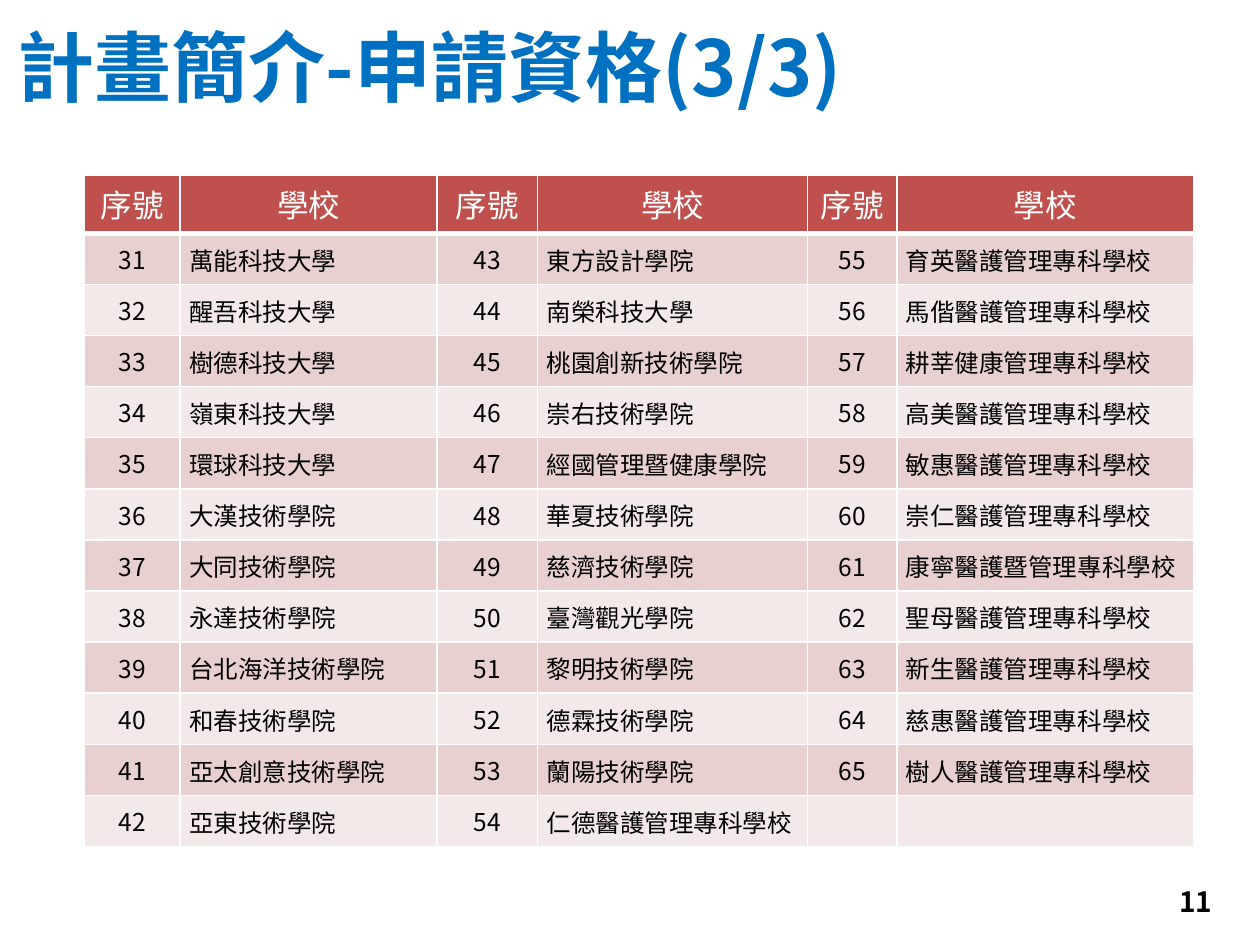
from lxml.etree import SubElement
from pptx import Presentation
from pptx.dml.color import RGBColor
from pptx.enum.text import MSO_ANCHOR, PP_ALIGN
from pptx.oxml.ns import qn
from pptx.util import Cm, Pt

TITLE = "計畫簡介-申請資格(3/3)"
PAGE_NUMBER = "11"
HEADINGS = ("序號", "學校")
FIRST_NUMBER = 31
SCHOOLS = [
    "萬能科技大學", "醒吾科技大學", "樹德科技大學", "嶺東科技大學",
    "環球科技大學", "大漢技術學院", "大同技術學院", "永達技術學院",
    "台北海洋技術學院", "和春技術學院", "亞太創意技術學院", "亞東技術學院",
    "東方設計學院", "南榮科技大學", "桃園創新技術學院", "崇右技術學院",
    "經國管理暨健康學院", "華夏技術學院", "慈濟技術學院", "臺灣觀光學院",
    "黎明技術學院", "德霖技術學院", "蘭陽技術學院", "仁德醫護管理專科學校",
    "育英醫護管理專科學校", "馬偕醫護管理專科學校", "耕莘健康管理專科學校",
    "高美醫護管理專科學校", "敏惠醫護管理專科學校", "崇仁醫護管理專科學校",
    "康寧醫護暨管理專科學校", "聖母醫護管理專科學校", "新生醫護管理專科學校",
    "慈惠醫護管理專科學校", "樹人醫護管理專科學校",
]
SCHOOLS_PER_BLOCK = 12
COLUMN_WIDTHS = (1.93, 5.18, 2.03, 5.44, 1.8, 5.99)
ROW_HEIGHT = 1.03
FONT = "Noto Sans CJK SC"
COLORS = {
    "title": "0070C0", "text": "000000", "white": "FFFFFF",
    "header": "C0504D", "odd": "E8D0D0", "even": "F4E9E9",
}


def style(paragraph, size, color, bold=False, align=PP_ALIGN.LEFT):
    paragraph.alignment = align
    font = paragraph.font
    font.size, font.bold, font.name = Pt(size), bold, FONT
    font.color.rgb = RGBColor.from_string(COLORS[color])
    properties = paragraph._p.pPr.find(qn("a:defRPr"))
    SubElement(properties, qn("a:ea"), typeface=FONT)


def set_insets(area, horizontal, vertical):
    area.margin_left = area.margin_right = Cm(horizontal)
    area.margin_top = area.margin_bottom = Cm(vertical)


def paint(cell, color, bottom_width):
    properties = cell._tc.get_or_add_tcPr()
    for side, width in (("L", 1), ("R", 1), ("T", 1), ("B", bottom_width)):
        border = SubElement(properties, qn(f"a:ln{side}"), w=str(Pt(width)))
        border_fill = SubElement(border, qn("a:solidFill"))
        SubElement(border_fill, qn("a:srgbClr"), val=COLORS["white"])
    cell.fill.solid()
    cell.fill.fore_color.rgb = RGBColor.from_string(COLORS[color])


def add_title(slide):
    title = slide.shapes.title
    title.left, title.top, title.width, title.height = Cm(0.1), Cm(0.13), Cm(22.86), Cm(2.39)
    title.text_frame.text = TITLE
    title.text_frame.vertical_anchor = MSO_ANCHOR.MIDDLE
    style(title.text_frame.paragraphs[0], 44, "title", bold=True)


def add_school_table(slide):
    row_count = SCHOOLS_PER_BLOCK + 1
    table = slide.shapes.add_table(
        row_count, len(COLUMN_WIDTHS), Cm(1.7), Cm(3.53),
        Cm(sum(COLUMN_WIDTHS)), Cm(ROW_HEIGHT * row_count),
    ).table
    for column, width in zip(table.columns, COLUMN_WIDTHS):
        column.width = Cm(width)
    for row in table.rows:
        row.height = Cm(ROW_HEIGHT)

    for column in range(len(COLUMN_WIDTHS)):
        block, is_school = divmod(column, 2)
        heading = table.cell(0, column)
        heading.text = HEADINGS[is_school]
        style(heading.text_frame.paragraphs[0], 18, "white", align=PP_ALIGN.CENTER)
        paint(heading, "header", 3)

        for row in range(1, row_count):
            entry = table.cell(row, column)
            entry.vertical_anchor = MSO_ANCHOR.MIDDLE
            set_insets(entry, 0.18 if is_school else 0.03, 0 if is_school else 0.01)
            paint(entry, "odd" if row % 2 else "even", 1)
            index = block * SCHOOLS_PER_BLOCK + row - 1
            if index >= len(SCHOOLS):
                continue
            entry.text = SCHOOLS[index] if is_school else str(FIRST_NUMBER + index)
            paragraph = entry.text_frame.paragraphs[0]
            if is_school:
                paragraph.line_spacing = Pt(21)
            style(paragraph, 14, "text", align=PP_ALIGN.LEFT if is_school else PP_ALIGN.CENTER)


def add_page_number(slide):
    frame = slide.shapes.add_textbox(Cm(18.77), Cm(17.65), Cm(5.92), Cm(1.02)).text_frame
    frame.word_wrap = True
    frame.vertical_anchor = MSO_ANCHOR.MIDDLE
    frame.text = PAGE_NUMBER
    style(frame.paragraphs[0], 16, "text", bold=True, align=PP_ALIGN.RIGHT)


def main():
    presentation = Presentation()
    presentation.slide_width, presentation.slide_height = Cm(25.4), Cm(19.05)
    slide = presentation.slides.add_slide(presentation.slide_layouts[5])
    add_title(slide)
    add_school_table(slide)
    add_page_number(slide)
    presentation.save("out.pptx")


if __name__ == "__main__":
    main()
